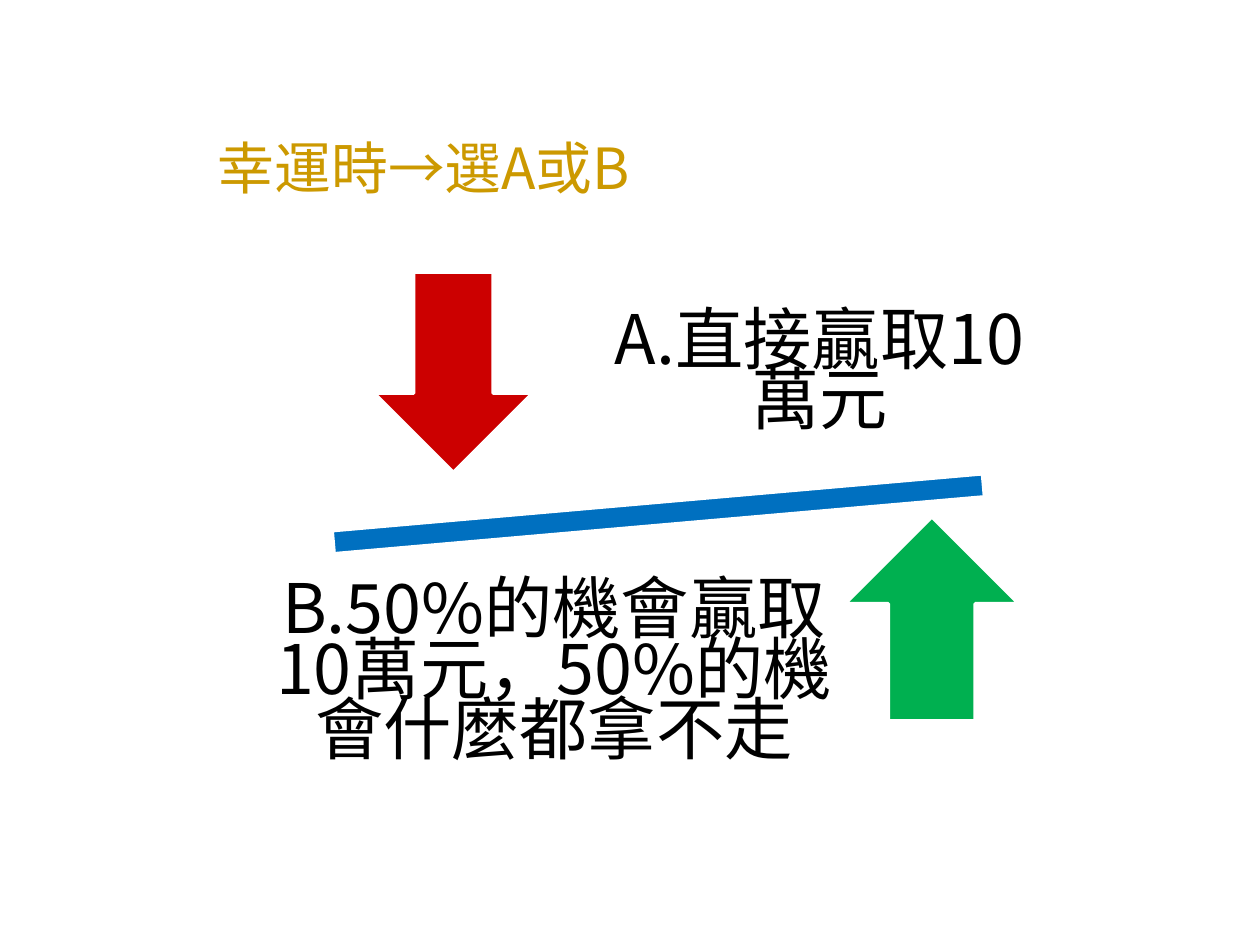
from dataclasses import dataclass

from lxml import etree
from pptx import Presentation
from pptx import util as u
from pptx.dml.color import RGBColor as Rgb
from pptx.enum import shapes, text
from pptx.oxml import ns


@dataclass(frozen=True)
class Theme:
    font: str = "Noto Sans CJK SC"
    gold: str = "CC9900"
    ink: str = "000000"
    blue: str = "0070C0"
    red: str = "CC0000"
    green: str = "00B050"
    edge: str = "FFFFFF"
    head: float = 32.4
    body: float = 39
    lead: float = 0.74
    line: float = 2


THEME = Theme()
KIND = shapes.MSO_SHAPE


def lengths(box):
    return [u.Inches(n) for n in box]


def label(slide, box, words, size, color, inset):
    frame = slide.shapes.add_textbox(*lengths(box)).text_frame
    frame.word_wrap = True
    frame.vertical_anchor = text.MSO_ANCHOR.MIDDLE
    frame.margin_left = frame.margin_right = u.Inches(inset)
    frame.margin_top = frame.margin_bottom = u.Inches(inset)
    para = frame.paragraphs[0]
    para.text = words
    font = para.font
    font.size = u.Pt(size)
    font.color.rgb = Rgb.from_string(color)
    font.name = THEME.font
    props = para._p.pPr.find(ns.qn("a:defRPr"))
    etree.SubElement(props, ns.qn("a:ea"), typeface=THEME.font)
    return para


def title(slide, box):
    label(slide, box, "幸運時→選A或B", THEME.head, THEME.gold, 0.05)


def choice(slide, box, words):
    para = label(slide, box, words, THEME.body, THEME.ink, 0.3)
    para.alignment = text.PP_ALIGN.CENTER
    para.line_spacing = THEME.lead


def solid(slide, kind, box, color, turn=0):
    shape = slide.shapes.add_shape(kind, *lengths(box))
    shape.shadow.inherit = False
    shape.fill.solid()
    shape.fill.fore_color.rgb = Rgb.from_string(color)
    shape.line.color.rgb = Rgb.from_string(THEME.edge)
    shape.line.width = u.Pt(THEME.line)
    shape.rotation = turn


def scale(slide, box):
    left, top, wide, high = box

    def place(x, y, w, h):
        return left + x * wide, top + y * high, w, h

    solid(slide, KIND.MATH_MINUS, place(0, 0.37, wide, 0.78), THEME.blue, 355)
    solid(slide, KIND.DOWN_ARROW, place(0.18, 0, 1.26, 1.59), THEME.red)
    choice(slide, place(0.39, 0.02, 4.11, 1.49), "A.直接贏取10萬元")
    solid(slide, KIND.UP_ARROW, place(0.71, 0.47, 1.38, 1.62), THEME.green)
    choice(slide, place(0.02, 0.55, 5.11, 1.87),
           "B.50%的機會贏取10萬元，50%的機會什麼都拿不走")


def main():
    deck = Presentation()
    deck.slide_width, deck.slide_height = lengths((10, 7.5))
    slide = deck.slides.add_slide(deck.slide_layouts[6])
    title(slide, (1.68, 1.03, 6.16, 0.58))
    scale(slide, (1.7, 2.16, 7.05, 4.13))
    deck.save("out.pptx")


if __name__ == "__main__":
    main()
